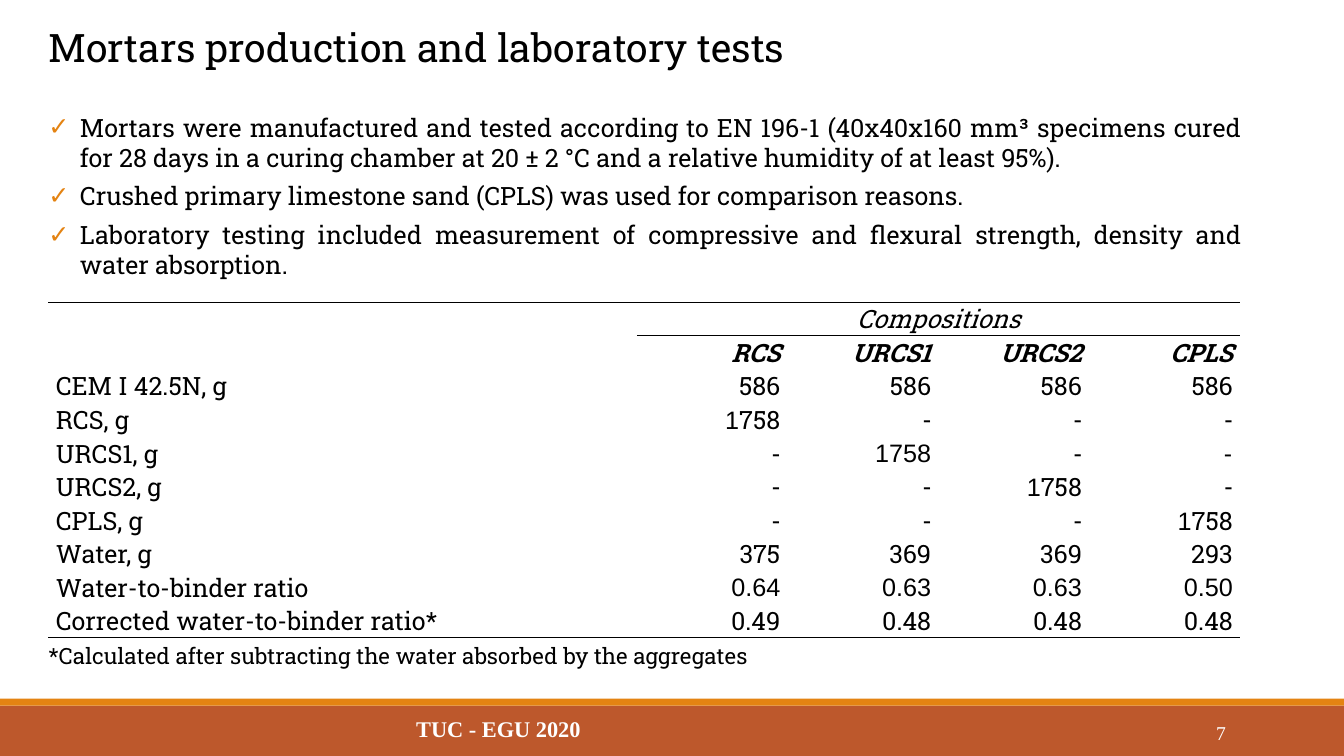
from lxml import etree
from pptx import Presentation
from pptx.dml.color import RGBColor
from pptx.enum.shapes import MSO_SHAPE
from pptx.enum.text import MSO_ANCHOR, MSO_AUTO_SIZE, PP_ALIGN
from pptx.oxml.ns import qn
from pptx.util import Pt

RECTANGLE = MSO_SHAPE.RECTANGLE
TOP, MIDDLE, BOTTOM = MSO_ANCHOR.TOP, MSO_ANCHOR.MIDDLE, MSO_ANCHOR.BOTTOM
LEFT, RIGHT = PP_ALIGN.LEFT, PP_ALIGN.RIGHT
CENTER, JUSTIFY = PP_ALIGN.CENTER, PP_ALIGN.JUSTIFY
NO_FIT = MSO_AUTO_SIZE.NONE
SLAB, ARIAL, TIMES = "Roboto Slab", "Arial", "Times New Roman"
BLACK, WHITE, ORANGE, RUST = "000000", "FFFFFF", "E48312", "BD582C"
NO_TABLE_STYLE = "{2D5ABB26-0587-4C30-8999-92F81FD0307C}"


def rgb(color):
    return RGBColor.from_string(color)


def write(paragraph, text, size=18, font=SLAB, color=BLACK, bold=False,
          italic=False, align=LEFT, spacing=1.0, after=0):
    paragraph.alignment = align
    paragraph.line_spacing = spacing
    paragraph.space_before = Pt(0)
    paragraph.space_after = Pt(after)
    run = paragraph.add_run()
    run.text = text
    run.font.size, run.font.name = Pt(size), font
    run.font.bold, run.font.italic = bold, italic
    run.font.color.rgb = rgb(color)


presentation = Presentation()
presentation.slide_width, presentation.slide_height = Pt(960), Pt(540)
slide = presentation.slides.add_slide(presentation.slide_layouts[1])

# Footer bands
for top, height, color in [(504, 36, RUST), (499, 5, ORANGE)]:
    band = slide.shapes.add_shape(RECTANGLE, Pt(0), Pt(top), Pt(960), Pt(height))
    band.shadow.inherit = False
    band.fill.solid()
    band.fill.fore_color.rgb = rgb(color)
    band.line.fill.background()

# Title
title = slide.shapes.title
title.left, title.top, title.width, title.height = Pt(27.4), Pt(11.5), Pt(673), Pt(42.5)
title.text_frame.auto_size = NO_FIT
title.text_frame.vertical_anchor = BOTTOM
write(title.text_frame.paragraphs[0], "Mortars production and laboratory tests",
      size=28, spacing=0.85)

# Check-marked list
statements = [
    "Mortars were manufactured and tested according to EN 196-1 (40x40x160 mm³ "
    "specimens cured for 28 days in a curing chamber at 20 ± 2 °C and a relative "
    "humidity of at least 95%).",
    "Crushed primary limestone sand (CPLS) was used for comparison reasons.",
    "Laboratory testing included measurement of compressive and flexural strength, "
    "density and water absorption.",
]
method = slide.placeholders[1]
method.left, method.top, method.width, method.height = Pt(27.4), Pt(76.3), Pt(867), Pt(128)
method.text_frame.auto_size = NO_FIT
method.text_frame.vertical_anchor = TOP
for index, statement in enumerate(statements):
    paragraph = (method.text_frame.add_paragraph() if index
                 else method.text_frame.paragraphs[0])
    properties = paragraph._p.get_or_add_pPr()
    properties.set("marL", str(Pt(22.5)))
    properties.set("indent", str(-Pt(22.5)))
    bullet_color = etree.SubElement(properties, qn("a:buClr"))
    etree.SubElement(bullet_color, qn("a:srgbClr"), val=ORANGE)
    etree.SubElement(properties, qn("a:buFont"), typeface=ARIAL)
    etree.SubElement(properties, qn("a:buChar"), char="✓")
    write(paragraph, statement, align=JUSTIFY, after=6)

# Compositions: each cell is a list of (text, font) pieces
DASH = [("-", ARIAL)]
SLAB_DASH = [("-", SLAB)]
AMOUNT = [("1", ARIAL), ("758", SLAB)]
ARIAL_AMOUNT = [("1758", ARIAL)]


def figures(font, *values):
    return [[(value, font)] for value in values]


mixes = [
    ("CEM I 42.5N, g", figures(SLAB, "586", "586", "586", "586")),
    ("RCS, g", [AMOUNT, DASH, DASH, DASH]),
    ("URCS1, g", [DASH, ARIAL_AMOUNT, DASH, SLAB_DASH]),
    ("URCS2, g", [DASH, DASH, AMOUNT, DASH]),
    ("CPLS, g", [DASH, DASH, DASH, AMOUNT]),
    ("Water, g", figures(SLAB, "375", "369", "369", "293")),
    ("Water-to-binder ratio", figures(ARIAL, "0.64", "0.63", "0.63", "0.50")),
    ("Corrected water-to-binder ratio*", figures(SLAB, "0.49", "0.48", "0.48", "0.48")),
]
header = figures(SLAB, "RCS", "URCS1", "URCS2", "CPLS")
rows = [[[], [("Compositions", SLAB)], [], [], []], [[], *header]]
rows += [[[(label, SLAB)], *values] for label, values in mixes]
last = len(rows) - 1

compositions = slide.shapes.add_table(
    len(rows), 5, Pt(34.5), Pt(216), Pt(851.5), Pt(239)).table
compositions.first_row = compositions.horz_banding = False
compositions._tbl.tblPr.find(qn("a:tableStyleId")).text = NO_TABLE_STYLE
for index, column in enumerate(compositions.columns):
    column.width = Pt(107.75 if index else 420.5)
compositions.cell(0, 0).merge(compositions.cell(1, 0))
compositions.cell(0, 1).merge(compositions.cell(0, 4))

for r, row in enumerate(rows):
    compositions.rows[r].height = Pt(24 if r else 23)
    for c, pieces in enumerate(row):
        cell = compositions.cell(r, c)
        cell.margin_left = cell.margin_right = Pt(5.4)
        cell.margin_top = cell.margin_bottom = Pt(0)
        cell.vertical_anchor = MIDDLE
        # Rules above and below the heading and under the last row
        ruled = {"a:lnL": False, "a:lnR": False,
                 "a:lnT": r == 0 or (r == 1 and c > 0),
                 "a:lnB": r == last or (r == 0 and c > 0)}
        for edge, visible in ruled.items():
            line = etree.SubElement(cell._tc.get_or_add_tcPr(), qn(edge), w=str(Pt(1)))
            if visible:
                fill = etree.SubElement(line, qn("a:solidFill"))
                etree.SubElement(fill, qn("a:srgbClr"), val=BLACK)
            else:
                etree.SubElement(line, qn("a:noFill"))
        cell.fill.background()
        align = CENTER if r == 0 else RIGHT if c else LEFT
        for text, font in pieces:
            write(cell.text_frame.paragraphs[0], text, font=font, bold=r == 1,
                  italic=r < 2, align=align)

# Footnote, footer and page number
captions = [
    ("*Calculated after subtracting the water absorbed by the aggregates",
     (27.4, 455, 533.5, 26.6), TOP, dict(size=16)),
    ("TUC - EGU 2020", (290.2, 505.9, 379.4, 28.8), MIDDLE,
     dict(size=16, font=TIMES, color=WHITE, bold=True)),
    ("7", (779.8, 508.8, 103, 28.8), MIDDLE,
     dict(size=14, font=TIMES, color=WHITE, align=RIGHT)),
]
for text, place, anchor, style in captions:
    caption = slide.shapes.add_textbox(*map(Pt, place)).text_frame
    caption.word_wrap = True
    caption.vertical_anchor = anchor
    write(caption.paragraphs[0], text, **style)

presentation.save("out.pptx")
